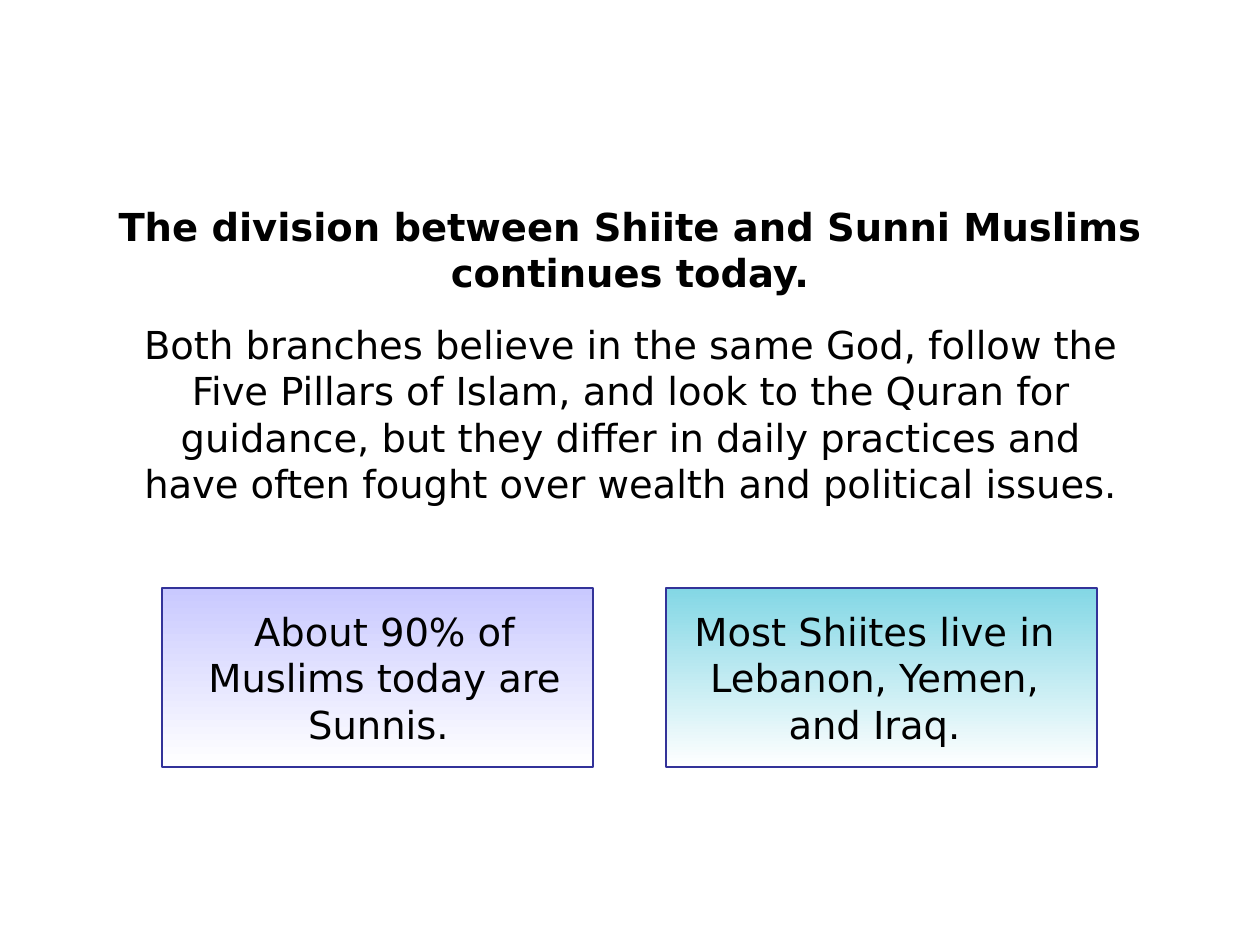
from pptx import Presentation
from pptx.dml.color import RGBColor
from pptx.enum.shapes import MSO_SHAPE
from pptx.enum.text import MSO_AUTO_SIZE, PP_ALIGN
from pptx.util import Emu, Pt

SCALE = 914400 / 126
FONT = {"name": "DejaVu Sans", "size": Pt(22)}

TITLE = "The division between Shiite and Sunni Muslims continues today."
BODY = (
    "Both branches believe in the same God, follow the Five Pillars of Islam, "
    "and look to the Quran for guidance, but they differ in daily practices "
    "and have often fought over wealth and political issues."
)
SUNNI = "About 90% of Muslims today are Sunnis. "
SHIITE = "Most Shiites live in Lebanon, Yemen, and Iraq."


def px(n):
    return Emu(round(n * SCALE))


def color(code):
    return RGBColor.from_string(code)


def add_panel(slide, left, top, width, height, tint):
    """Add a box that fades from the tint at its top to white."""
    box = slide.shapes.add_shape(
        MSO_SHAPE.RECTANGLE, px(left), px(top), px(width), px(height)
    )
    box.shadow.inherit = False
    box.fill.gradient()
    box.fill.gradient_angle = 270
    for stop, code, place in zip(box.fill.gradient_stops, (tint, "FFFFFF"), (0, 1)):
        stop.color.rgb = color(code)
        stop.position = place
    box.line.color.rgb = color("333399")
    box.line.width = Pt(0.75)


def add_text(slide, left, top, width, height, text, bold=False):
    box = slide.shapes.add_textbox(px(left), px(top), px(width), px(height))
    frame = box.text_frame
    frame.word_wrap = True
    frame.auto_size = MSO_AUTO_SIZE.SHAPE_TO_FIT_TEXT
    para = frame.paragraphs[0]
    para.alignment = PP_ALIGN.CENTER
    run = para.add_run()
    run.text = text
    for key, value in {**FONT, "bold": bold}.items():
        setattr(run.font, key, value)
    run.font.color.rgb = color("000000")


def main():
    deck = Presentation()
    deck.slide_width, deck.slide_height = px(1260), px(945)
    slide = deck.slides.add_slide(deck.slide_layouts[6])

    add_text(slide, 63, 197, 1134, 106, TITLE, bold=True)
    add_text(slide, 116, 315, 1029, 200, BODY)
    for left, tint, start, text in (
        (162, "C9C9FF", 176, SUNNI),
        (666, "83D7E5", 666, SHIITE),
    ):
        add_panel(slide, left, 588, 431, 179, tint)
        add_text(slide, start, 602, 417, 154, text)

    deck.save("out.pptx")


if __name__ == "__main__":
    main()
